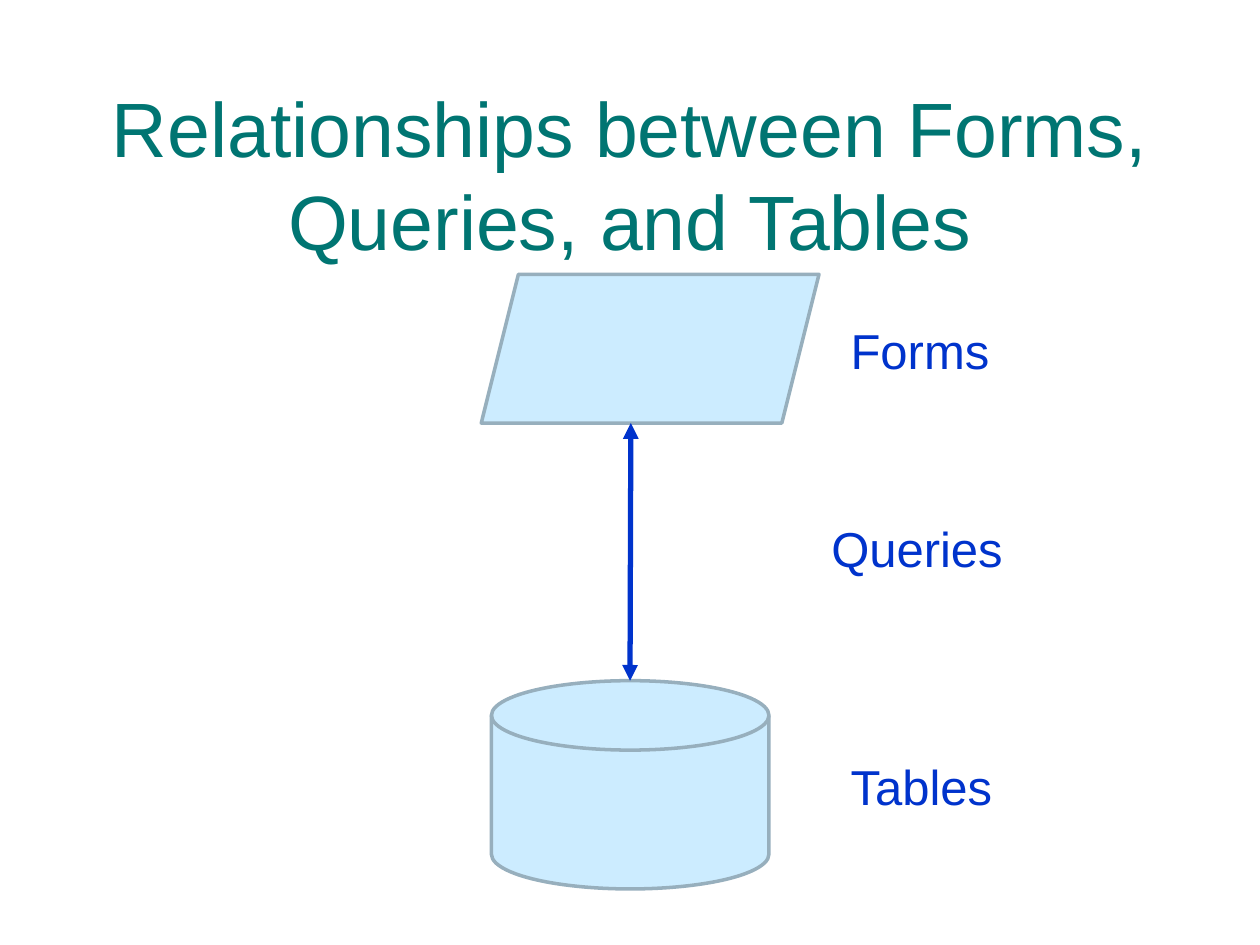
from pptx import Presentation
from pptx.dml.color import RGBColor
from pptx.enum.shapes import MSO_CONNECTOR, MSO_SHAPE
from pptx.enum.text import MSO_ANCHOR, MSO_AUTO_SIZE, PP_ALIGN
from pptx.oxml.ns import qn
from pptx.util import Pt
from lxml import etree

STRAIGHT = MSO_CONNECTOR.STRAIGHT
PARALLELOGRAM = MSO_SHAPE.PARALLELOGRAM
DISK = MSO_SHAPE.FLOWCHART_MAGNETIC_DISK
TOP, MIDDLE = MSO_ANCHOR.TOP, MSO_ANCHOR.MIDDLE
LEFT, CENTER = PP_ALIGN.LEFT, PP_ALIGN.CENTER
FIT_SHAPE, NO_FIT = MSO_AUTO_SIZE.SHAPE_TO_FIT_TEXT, MSO_AUTO_SIZE.NONE

FONT = "Arial"
TEAL, BLUE, PALE_BLUE, GRAY = "007572", "0033CC", "CCECFF", "97AFBD"


def color(value):
    return RGBColor.from_string(value)


def add_text(slide, text, left, top, width, height, *, size=28, fill=BLUE,
             align=LEFT, anchor=TOP, wrap=False):
    box = slide.shapes.add_textbox(Pt(left), Pt(top), Pt(width), Pt(height))
    frame = box.text_frame
    frame.word_wrap = wrap
    frame.auto_size = NO_FIT if wrap else FIT_SHAPE
    frame.vertical_anchor = anchor
    paragraph = frame.paragraphs[0]
    paragraph.alignment = align
    run = paragraph.add_run()
    run.text = text
    run.font.name = FONT
    run.font.size = Pt(size)
    run.font.color.rgb = color(fill)


def add_symbol(slide, kind, left, top, width, height):
    shape = slide.shapes.add_shape(kind, Pt(left), Pt(top), Pt(width), Pt(height))
    shape.shadow.inherit = False
    shape.fill.solid()
    shape.fill.fore_color.rgb = color(PALE_BLUE)
    shape.line.color.rgb = color(GRAY)
    shape.line.width = Pt(2)


def add_double_arrow(slide, start_x, start_y, end_x, end_y):
    connector = slide.shapes.add_connector(
        STRAIGHT, Pt(start_x), Pt(start_y), Pt(end_x), Pt(end_y))
    connector.line.color.rgb = color(BLUE)
    connector.line.width = Pt(3)
    properties = connector.element.spPr
    line = properties.find(qn("a:ln"))
    for end in ("a:headEnd", "a:tailEnd"):
        etree.SubElement(line, qn(end), type="triangle")
    etree.SubElement(properties, qn("a:effectLst"))


def main():
    presentation = Presentation()
    presentation.slide_width, presentation.slide_height = Pt(720), Pt(540)
    slide = presentation.slides.add_slide(presentation.slide_layouts[6])

    add_text(slide, "Relationships between Forms, Queries, and Tables",
             24, 54, 672, 90, size=44, fill=TEAL, align=CENTER,
             anchor=MIDDLE, wrap=True)
    add_symbol(slide, PARALLELOGRAM, 275, 156.75, 193, 85)
    add_symbol(slide, DISK, 280.8, 389, 158.6, 119)
    for label, left, top, width in (("Forms", 479, 179.5, 95),
                                    ("Queries", 468, 292.5, 114),
                                    ("Tables", 479, 428.5, 96.5)):
        add_text(slide, label, left, top, width, 41)
    add_double_arrow(slide, 360.5, 241.75, 360, 389)

    presentation.save("out.pptx")


if __name__ == "__main__":
    main()
